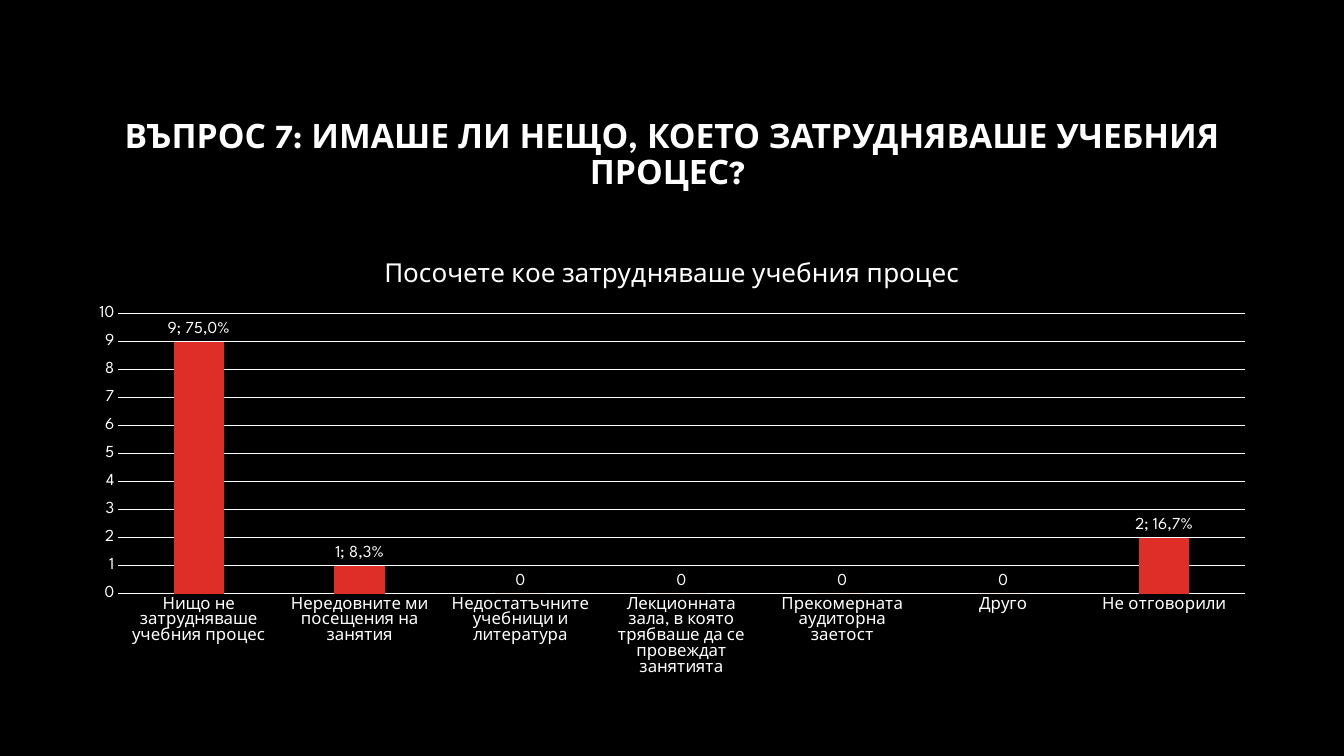
from dataclasses import dataclass

from pptx import Presentation
from pptx.chart.data import CategoryChartData
from pptx.dml.color import RGBColor
from pptx.enum.chart import XL_CHART_TYPE, XL_LABEL_POSITION, XL_TICK_MARK
from pptx.enum.text import MSO_ANCHOR, PP_ALIGN
from pptx.util import Inches, Pt

COLUMN = XL_CHART_TYPE.COLUMN_CLUSTERED
OUTSIDE = XL_LABEL_POSITION.OUTSIDE_END
NO_TICK = XL_TICK_MARK.NONE
MIDDLE = MSO_ANCHOR.MIDDLE
CENTER = PP_ALIGN.CENTER

HEADING = "ВЪПРОС 7: ИМАШЕ ЛИ НЕЩО, КОЕТО ЗАТРУДНЯВАШЕ УЧЕБНИЯ ПРОЦЕС? "
CHART_TITLE = "Посочете кое затрудняваше учебния процес"
ANSWERS = {
    "Нищо не затрудняваше учебния процес": 9,
    "Нередовните ми посещения на занятия": 1,
    "Недостатъчните учебници и литература": 0,
    "Лекционната зала, в която трябваше да се провеждат занятията": 0,
    "Прекомерната аудиторна заетост": 0,
    "Друго": 0,
    "Не отговорили": 2,
}
SHARES = {0: "9; 75,0%", 1: "1; 8,3%", 6: "2; 16,7%"}


@dataclass(frozen=True)
class Theme:
    background: RGBColor = RGBColor(0x00, 0x00, 0x00)
    text: RGBColor = RGBColor(0xFF, 0xFF, 0xFF)
    bar: RGBColor = RGBColor(0xDF, 0x2E, 0x28)
    font: str = "League Spartan"
    heading: float = 24
    chart_title: float = 18.6
    label: float = 12
    base: float = 10
    line: float = 0.75


class SlideBuilder:
    """Draws styled elements on one slide using a 16-column, 50-row grid."""

    COLS, ROWS = 16, 50

    def __init__(self, prs, theme):
        self.theme = theme
        self.col = prs.slide_width / self.COLS
        self.row = prs.slide_height / self.ROWS
        self.s = prs.slides.add_slide(prs.slide_layouts[6])
        fill = self.s.background.fill
        fill.solid()
        fill.fore_color.rgb = theme.background

    def box(self, x, y, w, h):
        return (int(x * self.col), int(y * self.row),
                int(w * self.col), int(h * self.row))

    def style(self, font, size, bold=False):
        font.name = self.theme.font
        font.size = Pt(size)
        font.bold = bold
        font.color.rgb = self.theme.text

    def rule(self, line):
        line.color.rgb = self.theme.text
        line.width = Pt(self.theme.line)

    def heading(self, text, *cells):
        tf = self.s.shapes.add_textbox(*self.box(*cells)).text_frame
        tf.word_wrap = True
        tf.vertical_anchor = MIDDLE
        p = tf.paragraphs[0]
        p.text = text
        p.alignment = CENTER
        p.line_spacing = 0.9
        self.style(p.font, self.theme.heading, bold=True)

    def column_chart(self, title, values, shares, *cells):
        data = CategoryChartData()
        data.categories = list(values)
        data.add_series(title, list(values.values()))
        chart = self.s.shapes.add_chart(COLUMN, *self.box(*cells), data).chart
        self.style(chart.font, self.theme.base)
        chart.has_legend = False
        chart.has_title = True
        p = chart.chart_title.text_frame.paragraphs[0]
        r = p.add_run()
        r.text = title
        self.style(r.font, self.theme.chart_title)
        self.axes(chart)
        self.bars(chart.plots[0], shares)

    def axes(self, chart):
        for axis in (chart.category_axis, chart.value_axis):
            axis.major_tick_mark = axis.minor_tick_mark = NO_TICK
            self.style(axis.tick_labels.font, self.theme.label)
        self.rule(chart.category_axis.format.line)
        value_axis = chart.value_axis
        value_axis.minimum_scale = 0
        value_axis.maximum_scale = 10
        value_axis.major_unit = 1
        value_axis.format.line.fill.background()
        self.rule(value_axis.major_gridlines.format.line)

    def bars(self, plot, shares):
        plot.gap_width = 219
        plot.overlap = -27
        plot.vary_by_categories = False
        series = plot.series[0]
        series.format.fill.solid()
        series.format.fill.fore_color.rgb = self.theme.bar
        labels = series.data_labels
        labels.show_value = True
        labels.position = OUTSIDE
        self.style(labels.font, self.theme.label)
        for index, text in shares.items():
            label = series.points[index].data_label
            r = label.text_frame.paragraphs[0].add_run()
            r.text = text
            self.style(r.font, self.theme.label)
            label.position = OUTSIDE


def main():
    prs = Presentation()
    prs.slide_width = Inches(13.33)
    prs.slide_height = Inches(7.5)
    slide = SlideBuilder(prs, Theme())
    slide.heading(HEADING, 0.9, 5.6, 14.2, 9.4)
    slide.column_chart(CHART_TITLE, ANSWERS, SHARES, 0.9, 16, 14.2, 29.33)
    prs.save("out.pptx")


if __name__ == "__main__":
    main()
